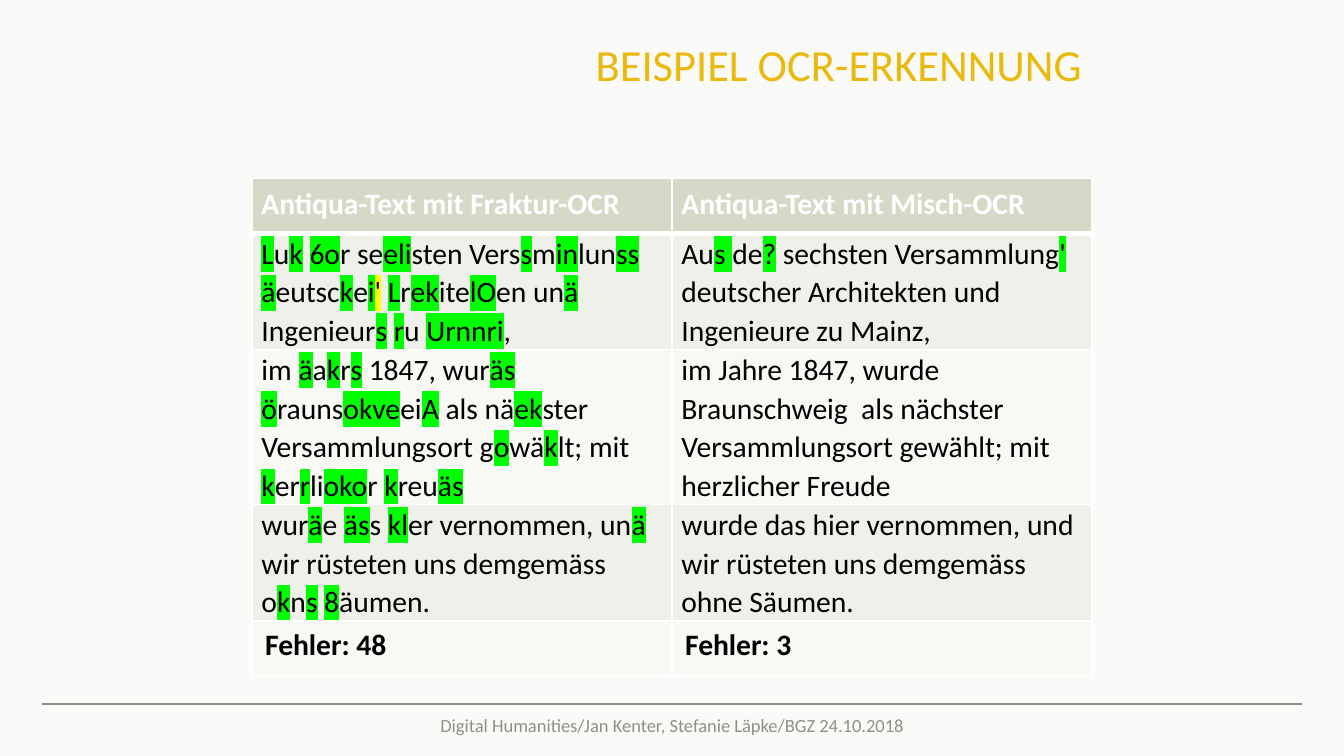
from lxml.etree import SubElement as Sub
from pptx import Presentation
from pptx.dml.color import RGBColor as RGB
from pptx.enum.shapes import MSO_CONNECTOR as Conn
from pptx.enum.text import MSO_ANCHOR as Anchor, PP_ALIGN as Align
from pptx.oxml.ns import qn
from pptx.util import Pt

PAPER = RGB(0xFA, 0xFA, 0xF9)
GOLD = RGB(0xEA, 0xB9, 0x0C)
GREY = RGB(0x90, 0x90, 0x85)
WHITE = RGB(0xFF, 0xFF, 0xFF)
BLACK = RGB(0x00, 0x00, 0x00)
HEAD = RGB(0xD8, 0xD8, 0xC8)
DARK = RGB(0xF0, 0xF0, 0xEB)
LIGHT = RGB(0xF8, 0xF8, 0xF5)
GREEN = RGB(0x00, 0xFF, 0x00)
YELLOW = RGB(0xFF, 0xFF, 0x00)

FONT = "Calibri"
MARK = "|"
ODD = "^"
ROWS = [
    ("Antiqua-Text mit Fraktur-OCR", "Antiqua-Text mit Misch-OCR"),
    ("|L|u|k| |6o|r se|eli|sten Vers|s|m|in|lun|ss| |ä|eutsc|k|e|i||^'| "
     "|L|r|ek|ite|lO|en un|ä| Ingenieur|s| |r|u |Urnnri|,",
     "Au|s |de|?| sechsten Versammlung|'| deutscher Architekten "
     "und Ingenieure zu Mainz,"),
    ("im |ä|a|k|r|s| 1847, wur|äs| |ö|rauns|okve|ei|A| als nä|ek|ster "
     "Versammlungsort g|o|wä|k|lt; mit |k|er|r|li|oko|r |k|reu|äs|",
     "im Jahre 1847, wurde Braunschweig  als nächster "
     "Versammlungsort gewählt; mit herzlicher Freude"),
    ("wur|ä|e |äs|s |kl|er vernommen, un|ä| wir rüsteten uns demgemäss "
     "o|k|n|s| |8|äumen.",
     "wurde das hier vernommen, und wir rüsteten uns demgemäss "
     "ohne Säumen."),
    ("Fehler: 48", "Fehler: 3"),
]
HIGH = [29.5, 62.5, 83.5, 62.5, 29.5]


def style(font, size, color, bold=False):
    font.name = FONT
    font.size = Pt(size)
    font.color.rgb = color
    font.bold = bold


def shade(run, color):
    mark = Sub(run.font._element, qn("a:highlight"))
    Sub(mark, qn("a:srgbClr"), val=str(color))


def add_runs(para, text):
    for pos, part in enumerate(text.split(MARK)):
        if not part:
            continue
        run = para.add_run()
        run.text = part.lstrip(ODD)
        if pos % 2:
            shade(run, YELLOW if part.startswith(ODD) else GREEN)


def add_edges(cell, top, base):
    props = cell._tc.get_or_add_tcPr()
    for side, width in zip("LRTB", (1, 1, top, base)):
        line = Sub(props, qn("a:ln" + side), w=str(Pt(width)))
        fill = Sub(line, qn("a:solidFill"))
        Sub(fill, qn("a:srgbClr"), val=str(WHITE))


def fill_cell(cell, row, text):
    first, last = row == 0, row == len(ROWS) - 1
    add_edges(cell, 3 if row == 1 else 1, 3 if first else 1)
    cell.fill.solid()
    cell.fill.fore_color.rgb = HEAD if first else DARK if row % 2 else LIGHT
    para = cell.text_frame.paragraphs[0]
    if not last:
        cell.margin_left = cell.margin_right = Pt(5.2)
        cell.margin_top = cell.margin_bottom = 0
        para.line_spacing = 1.2 if first else 1.07
    if first:
        para.space_after = Pt(6)
    elif not last:
        cell.vertical_anchor = Anchor.MIDDLE
    style(para.font, 16, WHITE if first else BLACK, first or last)
    add_runs(para, text)


def add_grid(slide):
    frame = slide.shapes.add_table(
        len(ROWS), 2, Pt(136), Pt(96.5), Pt(453.6), Pt(sum(HIGH)))
    table = frame.table
    for col in table.columns:
        col.width = Pt(226.8)
    for row, (texts, high) in enumerate(zip(ROWS, HIGH)):
        table.rows[row].height = Pt(high)
        for col, text in enumerate(texts):
            fill_cell(table.cell(row, col), row, text)


def add_text(slide, text, left, top, width, height, size, color):
    box = slide.shapes.add_textbox(Pt(left), Pt(top), Pt(width), Pt(height))
    frame = box.text_frame
    frame.word_wrap = True
    frame.margin_left = frame.margin_right = 0
    frame.margin_top = frame.margin_bottom = 0
    para = frame.paragraphs[0]
    para.text = text
    style(para.font, size, color)
    return frame


def add_rule(slide, left, right, top):
    rule = slide.shapes.add_connector(
        Conn.STRAIGHT, Pt(left), Pt(top), Pt(right), Pt(top))
    rule.line.color.rgb = GREY
    rule.line.width = Pt(1)
    Sub(rule._element.spPr, qn("a:effectLst"))


def main():
    deck = Presentation()
    deck.slide_width, deck.slide_height = Pt(725.8), Pt(408.2)
    slide = deck.slides.add_slide(deck.slide_layouts[6])
    slide.background.fill.solid()
    slide.background.fill.fore_color.rgb = PAPER

    add_rule(slide, 22.5, 703.3, 380)
    add_grid(slide)
    foot = add_text(
        slide, "Digital Humanities/Jan Kenter, Stefanie Läpke/BGZ 24.10.2018",
        164.3, 380, 397, 22.5, 10, GREY)
    foot.vertical_anchor = Anchor.MIDDLE
    foot.paragraphs[0].alignment = Align.CENTER
    title = add_text(
        slide, "BEISPIEL OCR-ERKENNUNG", 316, 23, 387.3, 51, 24, GOLD)
    title.margin_left = Pt(5.7)
    title.paragraphs[0].line_spacing = Pt(26)
    deck.save("out.pptx")


if __name__ == "__main__":
    main()
